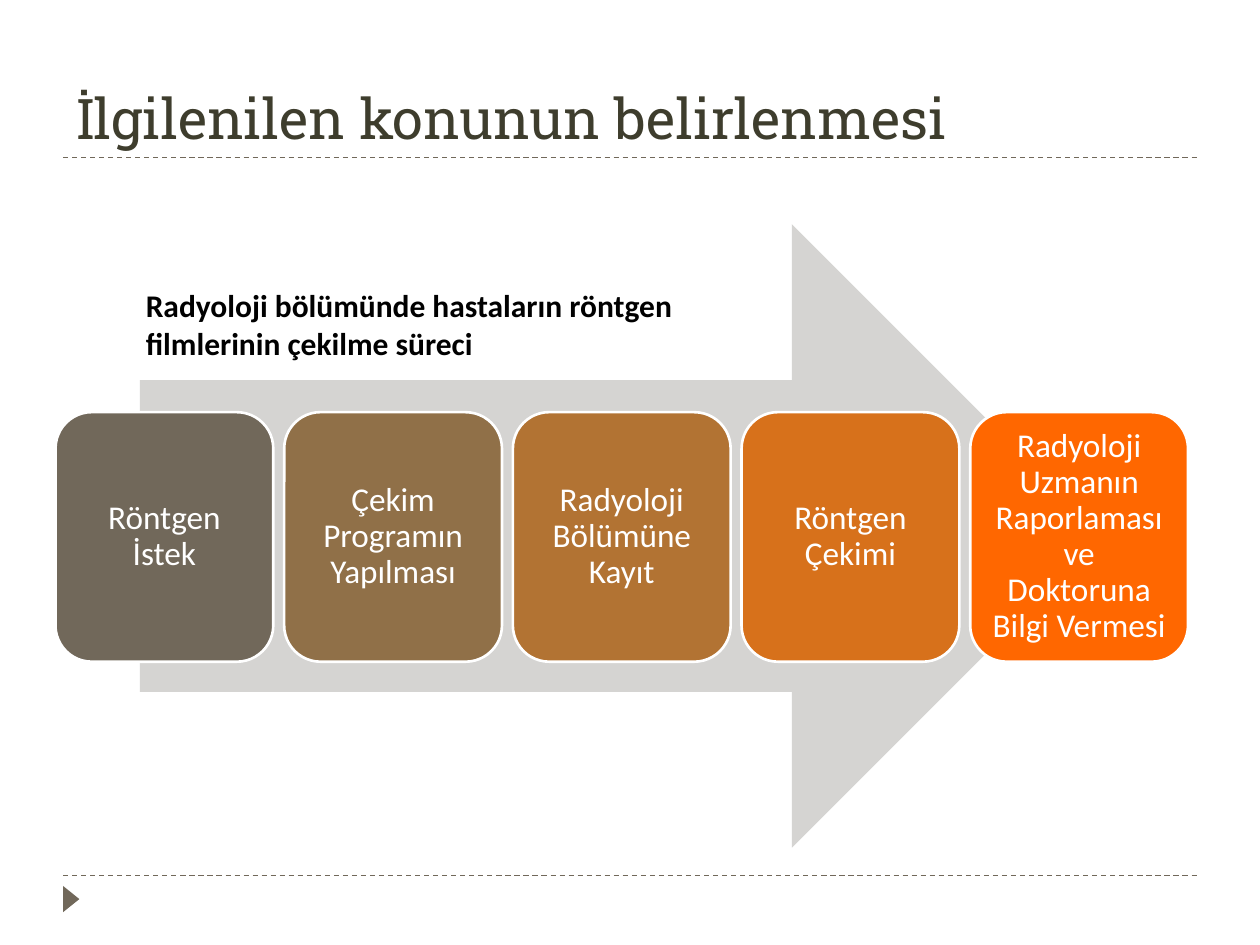
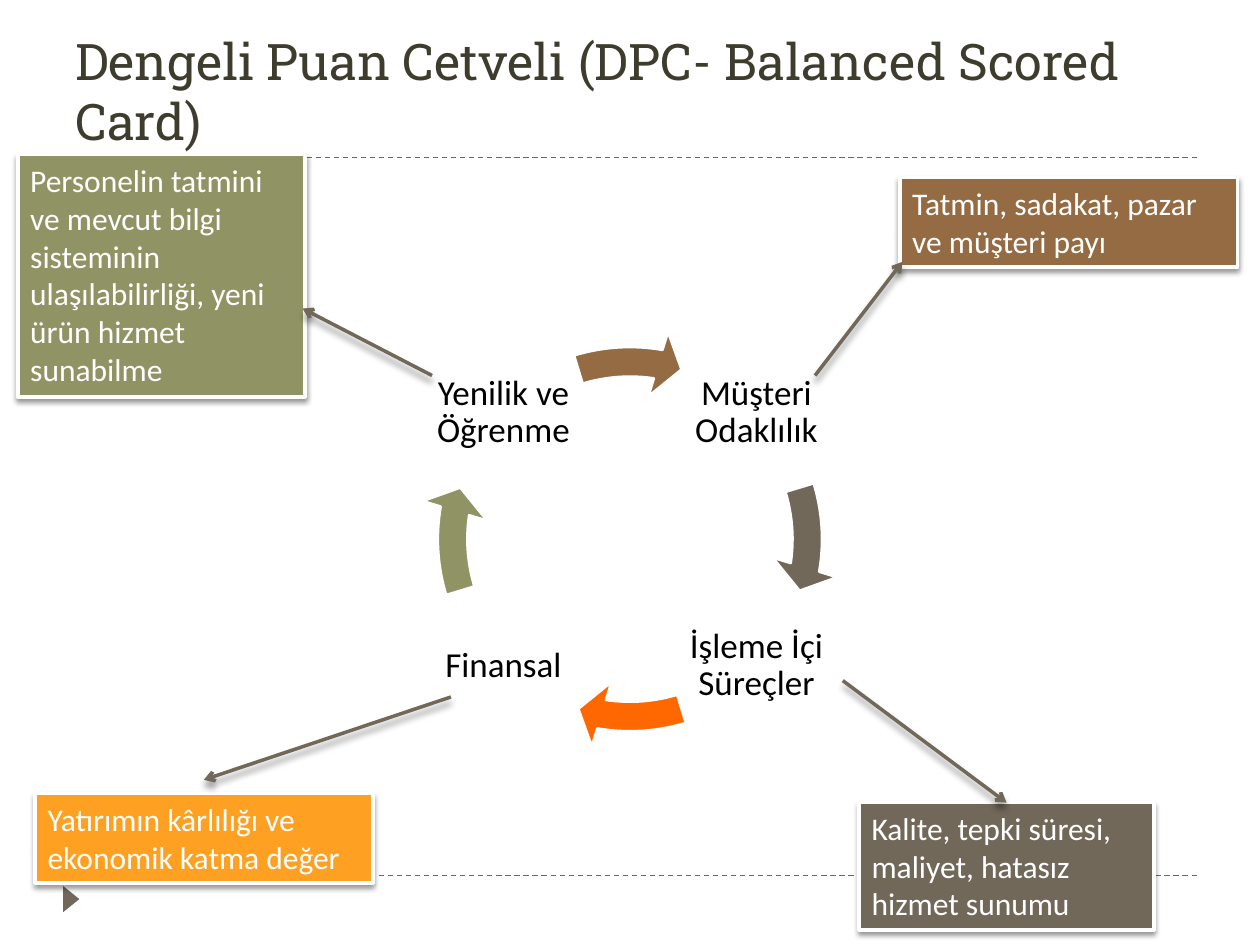
from lxml import etree
from pptx import Presentation
from pptx.dml.color import RGBColor
from pptx.enum.dml import MSO_LINE
from pptx.enum.shapes import MSO_CONNECTOR, MSO_SHAPE
from pptx.enum.text import MSO_ANCHOR, MSO_AUTO_SIZE, PP_ALIGN
from pptx.oxml.ns import qn
from pptx.util import Cm, Pt

LEFT, CENTER = PP_ALIGN.LEFT, PP_ALIGN.CENTER
TOP, MIDDLE, BOTTOM = MSO_ANCHOR.TOP, MSO_ANCHOR.MIDDLE, MSO_ANCHOR.BOTTOM
STRAIGHT = MSO_CONNECTOR.STRAIGHT
FIT_SHAPE = MSO_AUTO_SIZE.SHAPE_TO_FIT_TEXT

HEADING_FONT, BODY_FONT = "Roboto Slab", "Calibri"
COLORS = {
    "white": "FFFFFF", "black": "000000", "title": "3E3D2D",
    "taupe": "71685A", "pale": "D5D4D2", "olive": "909465",
    "brown": "956B43", "amber": "FEA022", "orange": "FF6700",
    "step2": "907048", "step3": "B27333", "step4": "D7711B",
}

# Content; lengths in cm
PROCESS_TITLE = "İlgilenilen konunun belirlenmesi"
PROCESS_CAPTION = "Radyoloji bölümünde hastaların röntgen filmlerinin çekilme süreci"
STEPS = [
    ("Röntgen İstek", "taupe"),
    ("Çekim Programın Yapılması", "step2"),
    ("Radyoloji Bölümüne Kayıt", "step3"),
    ("Röntgen Çekimi", "step4"),
    ("Radyoloji Uzmanın Raporlaması ve Doktoruna Bilgi Vermesi", "orange"),
]

SCORECARD_TITLE = "Dengeli Puan Cetveli (DPC- Balanced Scored Card)"
# Clockwise from top right: label, column side, row side, colour of the arrow that follows
PERSPECTIVES = [
    ("Müşteri Odaklılık", 1, -1, "taupe"),
    ("İşleme İçi Süreçler", 1, 1, "orange"),
    ("Finansal", -1, 1, "olive"),
    ("Yenilik ve Öğrenme", -1, -1, "brown"),
]
# Paragraphs, colour, box, pointer start, pointer end (None: middle of the top side)
MEASURES = [
    (["Yatırımın kârlılığı ve ekonomik katma değer"], "amber",
     (0.71, 16, 6.81, 1.8), (9.09, 14.05), (4.11, 15.72)),
    (["Tatmin, sadakat, pazar ve müşteri payı"], "brown",
     (18.14, 3.58, 6.81, 1.8), (16.43, 7.57), (18.19, 5.28)),
    (["Personelin tatmini ve mevcut bilgi sisteminin",
      "ulaşılabilirliği, yeni ürün hizmet sunabilme"], "olive",
     (0.36, 3.12, 5.79, 4.88), (8.71, 7.57), (6.1, 6.22)),
    (["Kalite, tepki süresi, maliyet, hatasız hizmet sunumu"], "taupe",
     (17.32, 16.18, 5.94, 2.57), (16.99, 13.72), None),
]

CYCLE_CENTER = (12.7, 10.87)
CYCLE_SIZE, LABEL_SIZE, LABEL_OFFSET = 8.51, 3.02, 2.55
QUARTER_TURN, FULL_TURN = 54, 216  # in units of the arrow's angle adjustments


def rgb(name):
    return RGBColor.from_string(COLORS[name])


def write(shape, paragraphs, size, color, font=BODY_FONT, align=LEFT, anchor=TOP,
          bold=False, spacing=1.0, inset=None):
    frame = shape.text_frame
    frame.word_wrap = True
    frame.vertical_anchor = anchor
    if inset is not None:
        frame.margin_left = frame.margin_right = Cm(inset)
        frame.margin_top = frame.margin_bottom = Cm(inset)
    frame.text = "\n".join(paragraphs)
    for paragraph in frame.paragraphs:
        paragraph.alignment = align
        paragraph.line_spacing = spacing
        paragraph.font.name = font
        paragraph.font.size = Pt(size)
        paragraph.font.bold = bold
        paragraph.font.color.rgb = rgb(color)


def add_text(slide, box, *args, **style):
    write(slide.shapes.add_textbox(*map(Cm, box)), *args, **style)


def add_filled(slide, kind, box, fill, outline=None):
    """Add a flat shape, with a white outline if a width in points is given."""
    shape = slide.shapes.add_shape(kind, *map(Cm, box))
    shape.shadow.inherit = False
    shape.fill.solid()
    shape.fill.fore_color.rgb = rgb(fill)
    if outline:
        shape.line.color.rgb = rgb("white")
        shape.line.width = Pt(outline)
    else:
        shape.line.fill.background()
    return shape


def add_line(slide, start, end, width):
    line = slide.shapes.add_connector(STRAIGHT, *map(Cm, (*start, *end)))
    line.line.color.rgb = rgb("taupe")
    line.line.width = Pt(width)
    etree.SubElement(line._element.spPr, qn("a:effectLst"))
    return line


def cast_shadow(shape, blur, distance):
    """Put a soft black shadow straight below; lengths in points."""
    effects = shape._element.spPr.find(qn("a:effectLst"))
    shadow = etree.SubElement(effects, qn("a:outerShdw"), blurRad=str(Pt(blur)),
                              dist=str(Pt(distance)), dir="5400000", rotWithShape="0")
    tint = etree.SubElement(shadow, qn("a:srgbClr"), val=COLORS["black"])
    etree.SubElement(tint, qn("a:alpha"), val="40000")


def add_base(deck, title, size):
    """Add a slide with the shared rules, corner marker and title."""
    slide = deck.slides.add_slide(deck.slide_layouts[6])
    for y in (17.65, 3.18):
        add_line(slide, (1.27, y), (24.13, y), 0.75).line.dash_style = MSO_LINE.DASH
    marker = add_filled(slide, MSO_SHAPE.ISOSCELES_TRIANGLE, (1.17, 17.96, 0.53, 0.33), "taupe")
    marker.rotation = 90
    add_text(slide, (1.27, 0.43, 22.86, 2.74), [title], size, "title",
             font=HEADING_FONT, anchor=BOTTOM)
    return slide


def build_process(deck):
    slide = add_base(deck, PROCESS_TITLE, 32)
    add_filled(slide, MSO_SHAPE.RIGHT_ARROW, (2.82, 4.52, 19.43, 12.57), "pale")
    for i, (step, color) in enumerate(STEPS):
        card = add_filled(slide, MSO_SHAPE.ROUNDED_RECTANGLE,
                          (1.12 + i * 4.61, 8.31, 4.39, 5.03), color, 1.5)
        write(card, [step], 19, "white", align=CENTER, anchor=MIDDLE, spacing=0.9, inset=0.2)
    add_text(slide, (2.69, 5.64, 13, 1.8), [PROCESS_CAPTION], 18, "black", bold=True)


def build_scorecard(deck):
    slide = add_base(deck, SCORECARD_TITLE, 28.8)
    center_x, center_y = CYCLE_CENTER
    for i, (label, column, row, color) in enumerate(PERSPECTIVES):
        add_text(slide, (center_x + column * LABEL_OFFSET - LABEL_SIZE / 2,
                         center_y + row * LABEL_OFFSET - LABEL_SIZE / 2,
                         LABEL_SIZE, LABEL_SIZE),
                 [label], 20, "black", align=CENTER, anchor=MIDDLE, spacing=0.9, inset=0.08)
        turn = add_filled(slide, MSO_SHAPE.CIRCULAR_ARROW,
                          (center_x - CYCLE_SIZE / 2, center_y - CYCLE_SIZE / 2,
                           CYCLE_SIZE, CYCLE_SIZE), color, 1.5)
        angle = i * QUARTER_TURN
        shaping = (0.07, 4.65, 5.5 + angle, (205.85 + angle) % FULL_TURN, 0.08)
        for index, value in enumerate(shaping):
            turn.adjustments[index] = value

    for paragraphs, color, box, start, end in MEASURES:
        measure = add_filled(slide, MSO_SHAPE.RECTANGLE, box, color, 2)
        cast_shadow(measure, 3, 2)
        write(measure, paragraphs, 18, "white")
        measure.text_frame.auto_size = FIT_SHAPE
        pointer = add_line(slide, start, end or box[:2], 2)
        if end is None:
            pointer.end_connect(measure, 0)
        cast_shadow(pointer, 4, 3.4)
        etree.SubElement(pointer.line._get_or_add_ln(), qn("a:tailEnd"), type="arrow")


def main():
    deck = Presentation()
    deck.slide_width, deck.slide_height = Cm(25.4), Cm(19.05)
    build_process(deck)
    build_scorecard(deck)
    deck.save("out.pptx")


if __name__ == "__main__":
    main()
